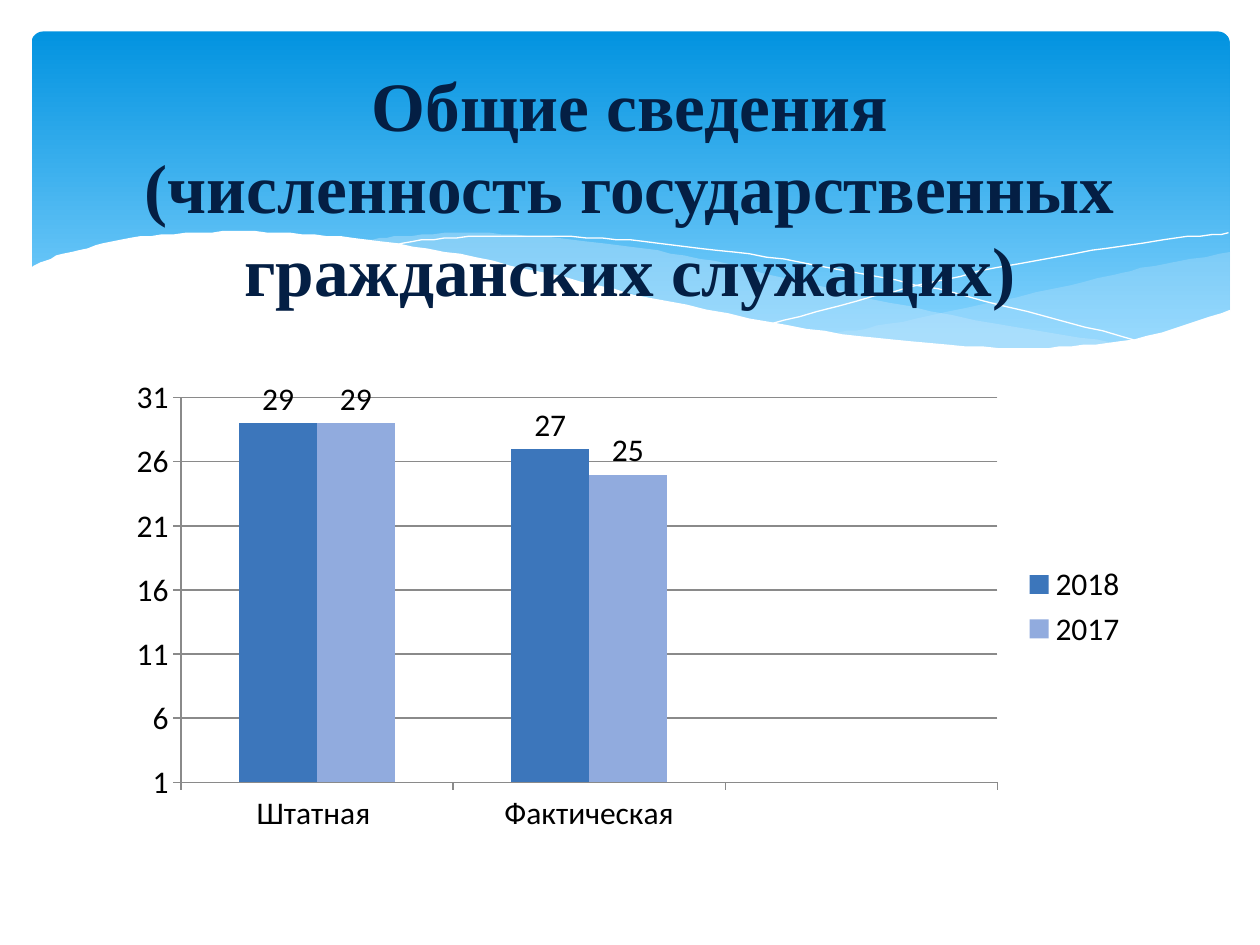
import pptx
import pptx.chart.data
import pptx.dml.color
import pptx.enum.chart
import pptx.enum.shapes
import pptx.enum.text
import pptx.oxml
import pptx.oxml.ns
import pptx.util

Pt = pptx.util.Pt
RGB = pptx.dml.color.RGBColor

SKY_TOP = RGB(0x02, 0x93, 0xE0)
SKY_BOTTOM = RGB(0x83, 0xD3, 0xFE)
MIST = RGB(0xC6, 0xE7, 0xFC)
WHITE = RGB(0xFF, 0xFF, 0xFF)
NAVY = RGB(0x04, 0x1F, 0x44)
BLACK = RGB(0x00, 0x00, 0x00)
GRID_GRAY = RGB(0x8A, 0x8A, 0x8A)
BAR_2018 = RGB(0x3C, 0x76, 0xBB)
BAR_2017 = RGB(0x91, 0xAB, 0xDE)

RIGHT_SWELL_TOP = [(702.7, 144), (652.3, 153.4), (619.9, 160.6), (560.9, 174.2),
                   (508.3, 185), (475.9, 190.8)]
RIGHT_SWELL_BOTTOM = [(475.9, 190.8), (517.7, 195.8), (562.3, 199.4), (601.2, 199.4),
                      (640.1, 195.8), (673.2, 188.6), (702.7, 177.8)]
LONG_SWELL_TOP = [(643, 196.6), (581, 187.2), (508.3, 172.8), (452.9, 159.8),
                  (399.6, 147.6), (352.1, 139.7), (302.4, 134.6), (259.9, 133.2),
                  (225.4, 135.4), (205.9, 137.5)]
LONG_SWELL_BOTTOM = [(205.9, 137.5), (260.6, 146.2), (323.3, 159.8), (381.6, 172.8),
                     (445, 185.8), (500.4, 194.4), (547.9, 199.4), (589, 200.2),
                     (617, 199.4), (643, 196.6)]
FALLING_LINE = [(222.5, 140.4), (254.2, 136.1), (299.5, 134.6), (352.1, 136.8),
                (400.3, 141.8), (457.9, 149.8), (523.4, 162.7), (598.3, 180.7),
                (653, 195.8)]
RISING_LINE = [(441.4, 185), (500.4, 169.2), (558.7, 155.5), (623.5, 143.3),
               (665.3, 136.8), (702, 133.2)]
WHITE_CREST = [(703.4, 177.1), (655.2, 192.2), (612, 198), (571, 198.7),
               (509.8, 194.4), (450.7, 185.8), (380.9, 172.1), (321.8, 158.4),
               (262.8, 145.4), (210.2, 136.8), (165.6, 133.2), (127.4, 132.5),
               (85.7, 134.6), (54.7, 140.4), (28.8, 147.6), (16.6, 153.4)]
WHITE_BASE = [(16.6, 236.9), (703.4, 236.9)]


def smooth_curve(knots, steps=6):
    padded = [knots[0], *knots, knots[-1]]
    curve = [knots[0]]
    for before, start, end, after in zip(padded, padded[1:], padded[2:], padded[3:]):
        for step in range(1, steps + 1):
            t = step / steps
            curve.append(tuple(
                0.5 * (2 * b + (c - a) * t + (2 * a - 5 * b + 4 * c - d) * t ** 2
                       + (3 * b - a - 3 * c + d) * t ** 3)
                for a, b, c, d in zip(before, start, end, after)))
    return curve


def add_outline(slide, points, closed):
    builder = slide.shapes.build_freeform(*points[0], scale=float(Pt(1)))
    builder.add_line_segments(points[1:], close=closed)
    outline = builder.convert_to_shape()
    outline.shadow.inherit = False
    return outline


def add_wave(slide, points, color, opacity=100):
    wave = add_outline(slide, points, True)
    wave.fill.solid()
    wave.fill.fore_color.rgb = color
    wave.line.fill.background()
    if opacity < 100:
        tint = wave.fill._xPr.find(".//" + pptx.oxml.ns.qn("a:srgbClr"))
        alpha = pptx.oxml.parse_xml(
            f'<a:alpha {pptx.oxml.ns.nsdecls("a")} val="{opacity * 1000}"/>')
        tint.append(alpha)


def add_wave_line(slide, knots):
    ripple = add_outline(slide, smooth_curve(knots), False)
    ripple.fill.background()
    ripple.line.color.rgb = WHITE
    ripple.line.width = Pt(0)


def add_sky(slide):
    sky = slide.shapes.add_shape(pptx.enum.shapes.MSO_SHAPE.ROUNDED_RECTANGLE,
                                 Pt(18), Pt(18), Pt(684.7), Pt(194.4))
    sky.adjustments[0] = 0.034
    sky.shadow.inherit = False
    sky.line.fill.background()
    sky.fill.gradient()
    sky.fill.gradient_angle = 270
    top, bottom = sky.fill.gradient_stops
    top.color.rgb, top.position = SKY_TOP, 0
    bottom.color.rgb, bottom.position = SKY_BOTTOM, 0.9


def add_text(slide, text, *, left, top, width, height, size, font, color, bold, leading):
    frame = slide.shapes.add_textbox(Pt(left), Pt(top), Pt(width), Pt(height)).text_frame
    frame.word_wrap = True
    frame.vertical_anchor = pptx.enum.text.MSO_ANCHOR.MIDDLE
    paragraph = frame.paragraphs[0]
    paragraph.text = text
    paragraph.alignment = pptx.enum.text.PP_ALIGN.CENTER
    paragraph.line_spacing = Pt(leading)
    for run in paragraph.runs:
        run.font.size = Pt(size)
        run.font.name = font
        run.font.bold = bold
        run.font.color.rgb = color


def style_axis(axis):
    axis.format.line.color.rgb = GRID_GRAY
    axis.major_tick_mark = pptx.enum.chart.XL_TICK_MARK.OUTSIDE


def place_plot(chart, x, y, w, h):
    plot_area = chart._chartSpace.chart.plotArea
    for old in plot_area.findall(pptx.oxml.ns.qn("c:layout")):
        plot_area.remove(old)
    plot_area.insert(0, pptx.oxml.parse_xml(
        f'<c:layout {pptx.oxml.ns.nsdecls("c")}><c:manualLayout>'
        '<c:layoutTarget val="inner"/><c:xMode val="edge"/><c:yMode val="edge"/>'
        f'<c:x val="{x}"/><c:y val="{y}"/><c:w val="{w}"/><c:h val="{h}"/>'
        '</c:manualLayout></c:layout>'))


def add_staff_chart(slide):
    staff = pptx.chart.data.CategoryChartData()
    staff.categories = ["Штатная ", "Фактическая", ""]
    staff.add_series("2018", (29, 27, None))
    staff.add_series("2017", (29, 25, None))
    chart = slide.shapes.add_chart(pptx.enum.chart.XL_CHART_TYPE.COLUMN_CLUSTERED,
                                   Pt(68.4), Pt(211), Pt(583.2), Pt(271.4), staff).chart
    chart.has_title = False
    chart.font.size = Pt(18)
    chart.font.name = "Calibri"
    chart.font.color.rgb = BLACK
    chart.has_legend = True
    chart.legend.position = pptx.enum.chart.XL_LEGEND_POSITION.RIGHT
    chart.legend.include_in_layout = False
    place_plot(chart, 0.06, 0.06, 0.8, 0.81)

    style_axis(chart.category_axis)
    headcount = chart.value_axis
    style_axis(headcount)
    headcount.minimum_scale = 1
    headcount.maximum_scale = 31
    headcount.major_unit = 5
    headcount.has_major_gridlines = True
    headcount.major_gridlines.format.line.color.rgb = GRID_GRAY

    columns = chart.plots[0]
    columns.gap_width = 150
    columns.overlap = 0
    columns.vary_by_categories = False
    for year, color in zip(columns.series, (BAR_2018, BAR_2017)):
        year.format.fill.solid()
        year.format.fill.fore_color.rgb = color
        year.data_labels.show_value = True
        year.data_labels.position = pptx.enum.chart.XL_LABEL_POSITION.OUTSIDE_END


def main():
    deck = pptx.Presentation()
    deck.slide_width, deck.slide_height = Pt(720), Pt(540)
    slide = deck.slides.add_slide(deck.slide_layouts[6])
    add_sky(slide)
    add_wave(slide, smooth_curve(RIGHT_SWELL_TOP) + smooth_curve(RIGHT_SWELL_BOTTOM), MIST, 29)
    add_wave(slide, smooth_curve(LONG_SWELL_TOP) + smooth_curve(LONG_SWELL_BOTTOM), MIST, 40)
    add_wave_line(slide, FALLING_LINE)
    add_wave_line(slide, RISING_LINE)
    add_wave(slide, smooth_curve(WHITE_CREST) + WHITE_BASE, WHITE)
    add_staff_chart(slide)
    add_text(slide, "Общие сведения\n(численность государственных гражданских служащих)",
             left=36, top=84, width=648, height=45.4, size=39.6,
             font="Times New Roman", color=NAVY, bold=True, leading=47)
    deck.save("out.pptx")


if __name__ == "__main__":
    main()
